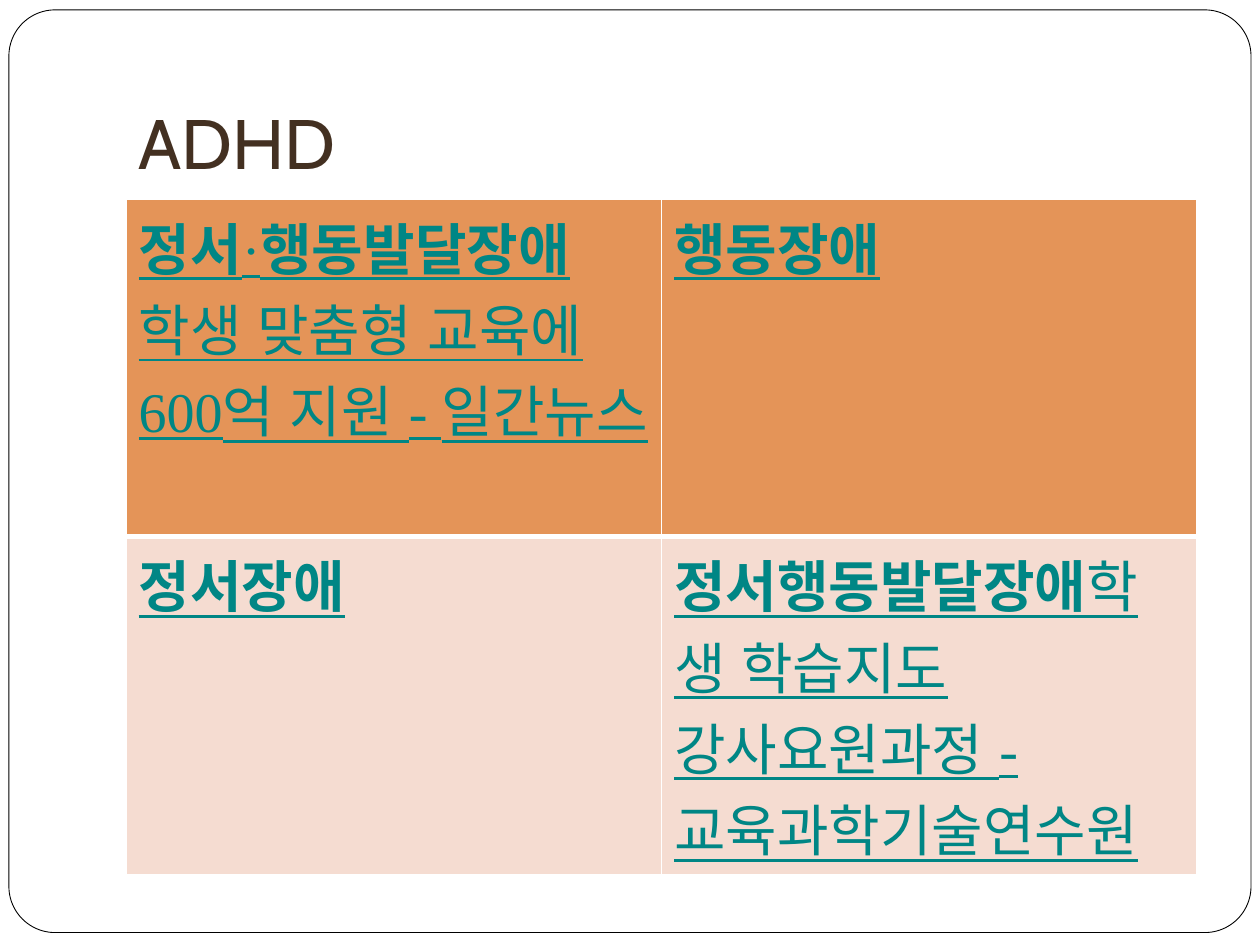
from lxml.etree import SubElement
from pptx import Presentation
from pptx.dml.color import RGBColor
from pptx.enum.lang import MSO_LANGUAGE_ID as Language
from pptx.enum.shapes import MSO_SHAPE as Shape
from pptx.enum.text import MSO_ANCHOR as Anchor, MSO_AUTO_SIZE as AutoSize, PP_ALIGN as Align
from pptx.oxml.ns import qn
from pptx.util import Cm, Pt

COLORS = {
    "white": "FFFFFF",
    "outline": "000000",
    "title": "433021",
    "link": "008685",
    "header": "E49458",
    "body": "F5DCD1",
}
TOPICS = [
    [
        [("정서", True), ("·", False), ("행동발달장애", True),
         (" 학생 맞춤형 교육에 600억 지원 - 일간뉴스", False)],
        [("행동장애", True)],
    ],
    [
        [("정서장애", True)],
        [("정서행동발달장애", True),
         ("학생 학습지도 강사요원과정 - 교육과학기술연수원", False)],
    ],
]


def color(name):
    """Return the named palette colour."""
    return RGBColor.from_string(COLORS[name])


def add_frame(slide, left, top, width, height):
    """Draw the rounded frame around the slide."""
    frame = slide.shapes.add_shape(Shape.ROUNDED_RECTANGLE, left, top, width, height)
    frame.adjustments[0] = 0.05
    frame.shadow.inherit = False
    frame.fill.solid()
    frame.fill.fore_color.rgb = color("white")
    frame.line.color.rgb = color("outline")
    frame.line.width = Pt(0.5)
    slide.shapes._spTree.insert(2, frame._element)


def fill_title(slide, text, left, top, width, height):
    """Place and format the title placeholder."""
    title = slide.shapes.title
    title.left, title.top, title.width, title.height = left, top, width, height
    text_frame = title.text_frame
    text_frame.auto_size = AutoSize.NONE
    text_frame.vertical_anchor = Anchor.BOTTOM
    text_frame.margin_bottom = Cm(0.25)
    paragraph = text_frame.paragraphs[0]
    paragraph.alignment = Align.LEFT
    run = paragraph.add_run()
    run.text = text
    run.font.name = "Cabin"
    run.font.size = Pt(40)
    run.font.color.rgb = color("title")


def add_borders(cell, widths):
    """Give a cell white borders of the given point widths."""
    properties = cell._tc.get_or_add_tcPr()
    for side, width in widths.items():
        line = SubElement(properties, qn(f"a:ln{side}"), w=str(Pt(width)))
        fill = SubElement(line, qn("a:solidFill"))
        SubElement(fill, qn("a:srgbClr"), val=COLORS["white"])


def fill_cell(cell, runs, fill_name):
    """Fill a cell with its background and underlined runs."""
    cell.fill.solid()
    cell.fill.fore_color.rgb = color(fill_name)
    paragraph = cell.text_frame.paragraphs[0]
    for text, bold in runs:
        run = paragraph.add_run()
        run.text = text
        font = run.font
        font.name = "Times New Roman"
        font.size = Pt(32)
        font.bold = bold
        font.underline = True
        font.language_id = Language.KOREAN
        font.color.rgb = color("link")


def add_topic_table(slide, topics, left, top, width, height):
    """Add the table of topics, with a thick rule under its first row."""
    table = slide.shapes.add_table(
        len(topics), len(topics[0]), left, top, width, height
    ).table
    for row_index, row in enumerate(topics):
        is_header = row_index == 0
        widths = {
            "L": 1,
            "R": 1,
            "T": 1 if is_header else 3,
            "B": 3 if is_header else 1,
        }
        for column_index, runs in enumerate(row):
            cell = table.cell(row_index, column_index)
            add_borders(cell, widths)
            fill_cell(cell, runs, "header" if is_header else "body")


def main():
    """Build and save the slide."""
    presentation = Presentation()
    presentation.slide_width, presentation.slide_height = Cm(25.4), Cm(19.05)
    slide = presentation.slides.add_slide(presentation.slide_layouts[5])
    add_frame(slide, Cm(0.18), Cm(0.2), Cm(25.04), Cm(18.6))
    fill_title(slide, "ADHD", Cm(2.54), Cm(0.76), Cm(21.59), Cm(3.18))
    add_topic_table(slide, TOPICS, Cm(2.54), Cm(4.01), Cm(21.59), Cm(13.6))
    presentation.save("out.pptx")


if __name__ == "__main__":
    main()
